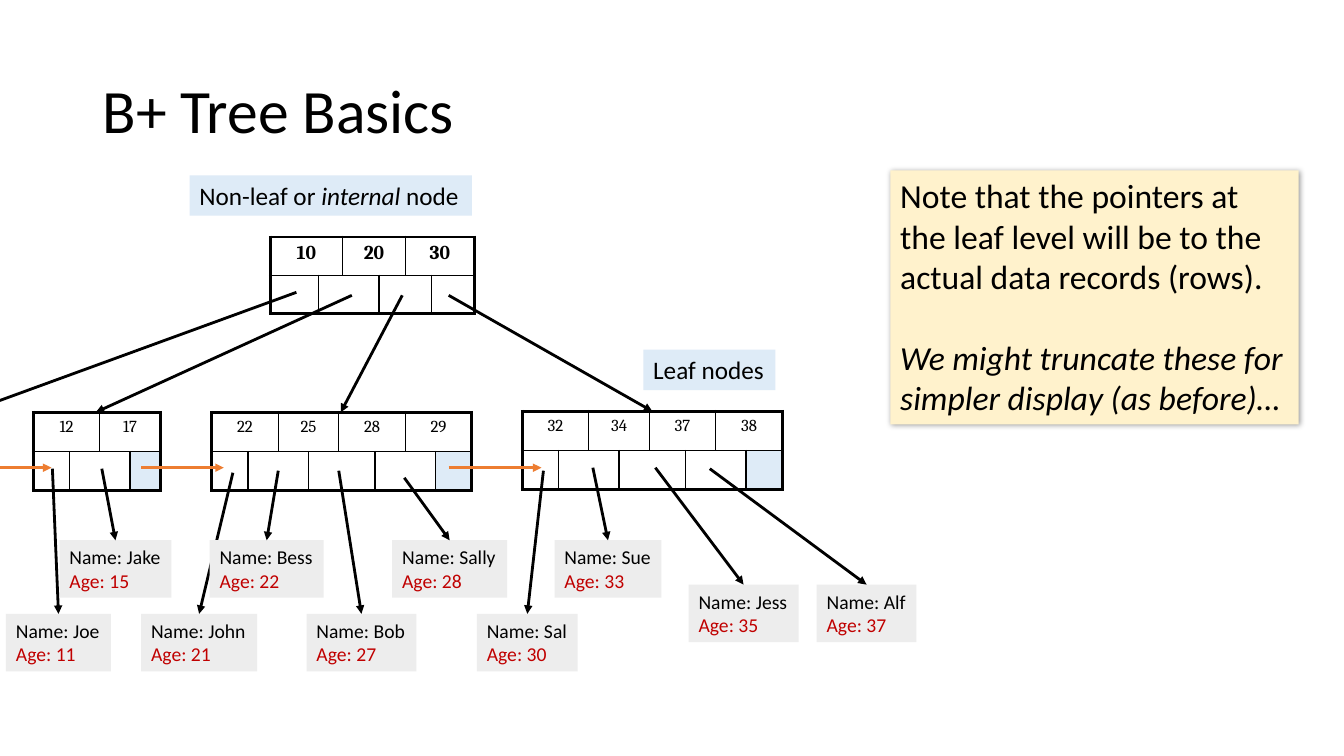
import dataclasses

import lxml.etree
import pptx
import pptx.dml.color
import pptx.enum.shapes
import pptx.enum.text
import pptx.oxml.ns
import pptx.util

Inches, Pt = pptx.util.Inches, pptx.util.Pt
RGB = pptx.dml.color.RGBColor.from_string
qn = pptx.oxml.ns.qn
SubElement = lxml.etree.SubElement


@dataclasses.dataclass(frozen=True)
class Theme:
    black: str = "000000"
    age: str = "C00000"
    link: str = "ED7D31"
    label: str = "DEEBF7"
    note: str = "FFF2CC"
    record: str = "EDEDED"
    body_font: str = "Calibri"
    key_font: str = "Cambria"
    title_size: int = 44
    note_size: int = 24
    label_size: int = 18
    record_size: int = 14
    root_size: int = 14
    leaf_size: int = 12
    inner_border: float = 1
    outer_border: float = 2.25
    arrow_width: float = 2


theme = Theme()
presentation = pptx.Presentation()
presentation.slide_width = Inches(13.33)
presentation.slide_height = Inches(7.5)
slide = presentation.slides.add_slide(presentation.slide_layouts[6])


def add_box(bounds, paragraphs, size, fill=None, wrap=False):
    """Add text; each paragraph is a list of (text, italic, colour) runs."""
    shape = slide.shapes.add_textbox(*map(Inches, bounds))
    if fill:
        shape.fill.solid()
        shape.fill.fore_color.rgb = RGB(fill)
    frame = shape.text_frame
    frame.word_wrap = wrap
    if fill:
        frame.auto_size = pptx.enum.text.MSO_AUTO_SIZE.SHAPE_TO_FIT_TEXT
    for index, runs in enumerate(paragraphs):
        paragraph = frame.add_paragraph() if index else frame.paragraphs[0]
        for text, italic, color in runs:
            run = paragraph.add_run()
            run.text = text
            run.font.color.rgb = RGB(color)
            formats = {"name": theme.body_font, "size": Pt(size), "italic": italic}
            for name, value in formats.items():
                setattr(run.font, name, value)
    return shape


def add_arrow(start, end, color=theme.black):
    connector = slide.shapes.add_connector(
        pptx.enum.shapes.MSO_CONNECTOR.STRAIGHT, *map(Inches, (*start, *end)))
    connector.line.color.rgb = RGB(color)
    connector.line.width = Pt(theme.arrow_width)
    SubElement(connector.line._get_or_add_ln(), qn("a:tailEnd"), type="triangle")
    SubElement(connector._element.spPr, qn("a:effectLst"))
    return connector


# Title and labels
black = theme.black
title = add_box((0.92, 0.4, 11.5, 1.45), [[("B+ Tree Basics", False, black)]],
                theme.title_size, wrap=True)
title.text_frame.vertical_anchor = pptx.enum.text.MSO_ANCHOR.MIDDLE
title.text_frame.paragraphs[0].line_spacing = 0.9
add_box((1.88, 1.74, 2.8, 0.4),
        [[("Non-leaf or ", False, black), ("internal ", True, black), ("node", False, black)]],
        theme.label_size, theme.label)
add_box((6.38, 3.47, 1.31, 0.4), [[("Leaf nodes", False, black)]],
        theme.label_size, theme.label)

# Note with a soft shadow
note = add_box(
    (8.83, 1.69, 4.05, 2.52),
    [[("Note that the pointers at the leaf level will be to the actual data records (rows).",
       False, black)],
     [("We might truncate these for simpler display (as before)…", True, black)]],
    theme.note_size, theme.note, wrap=True)
note.text_frame.paragraphs[1].space_before = Pt(29)
effects = SubElement(note._element.spPr, qn("a:effectLst"))
shadow = SubElement(effects, qn("a:outerShdw"), blurRad=str(Pt(4)), dist=str(Pt(1)),
                    dir="2700000", algn="tl", rotWithShape="0")
shadow_color = SubElement(shadow, qn("a:srgbClr"), val=black)
SubElement(shadow_color, qn("a:alpha"), val="40000")

# Tree nodes: keys span column pairs, pointers sit half a pair to the side
wide_leaf = [0.36, 0.3, 0.3, 0.3, 0.36, 0.3, 0.3, 0.36]
nodes = [
    ((2.68, 2.35), [10, 20, 30], [0.48, 0.21, 0.36, 0.26, 0.26, 0.43], 0.38, False),
    ((0.33, 4.09), [12, 17], wide_leaf[:4], 0.39, True),
    ((2.1, 4.09), [22, 25, 28, 29], wide_leaf, 0.39, True),
    ((5.18, 4.08), [32, 34, 37, 38], wide_leaf, 0.39, True),
]
for (left, top), keys, widths, row_height, is_leaf in nodes:
    last = len(widths) - 1
    size = theme.leaf_size if is_leaf else theme.root_size
    table = slide.shapes.add_table(2, len(widths), Inches(left), Inches(top),
                                   Inches(sum(widths)), Inches(2 * row_height)).table
    table.first_row = table.horz_banding = False
    for column, width in zip(table.columns, widths):
        column.width = Inches(width)
    for row in table.rows:
        row.height = Inches(row_height)
    key_spans = [(0, first, first + 1) for first in range(0, last, 2)]
    pointer_spans = [(1, max(first, 0), min(first + 1, last)) for first in range(-1, last + 1, 2)]
    texts = [str(key) for key in keys] + [""] * len(pointer_spans)
    for (row, first, end), text in zip(key_spans + pointer_spans, texts):
        outer = {"L": first == 0, "R": end == last, "T": row == 0, "B": row == 1}
        for index in range(first, end + 1):
            cell = table.cell(row, index)
            properties = cell._tc.get_or_add_tcPr()
            for side, is_outer in outer.items():
                width = theme.outer_border if is_outer else theme.inner_border
                border = SubElement(properties, qn(f"a:ln{side}"), w=str(Pt(width)))
                SubElement(SubElement(border, qn("a:solidFill")), qn("a:srgbClr"), val=black)
            cell.fill.background()
        cell = table.cell(row, first)
        if end > first:
            cell.merge(table.cell(row, end))
        if is_leaf and row == 1 and first == last:
            cell.fill.solid()
            cell.fill.fore_color.rgb = RGB(theme.label)
        paragraph = cell.text_frame.paragraphs[0]
        paragraph.text = text
        paragraph.alignment = pptx.enum.text.PP_ALIGN.CENTER
        paragraph.space_before = Pt(size * 0.2)
        paragraph.font.size = Pt(size)
        for run in paragraph.runs:
            run.font.color.rgb = RGB(black)
            formats = {"name": theme.key_font, "size": Pt(size), "bold": not is_leaf}
            for name, value in formats.items():
                setattr(run.font, name, value)

# Root pointers to the leaves
for start, end in [((2.94, 2.9), (-0.13, 4.02)), ((3.49, 2.93), (0.95, 4.09)),
                   ((3.99, 2.93), (3.38, 4.09)), ((4.45, 2.93), (6.47, 4.08))]:
    add_arrow(start, end)

# Links between neighbouring leaves
for start, end in [(0, 0.51), (1.4, 2.22), (4.45, 5.37)]:
    add_arrow((start, 4.64), (end, 4.64), theme.link)

# Data records, each with the leaf pointer that reaches it
upper, middle, lower = 5.36, 5.8, 6.09
records = [
    ("John", 21, 1.4, lower, 1.15, (2.31, 4.69)),
    ("Jake", 15, 0.59, upper, 1.11, (1.01, 4.65)),
    ("Joe", 11, 0.06, lower, 1.04, (0.52, 4.65)),
    ("Bess", 22, 2.08, upper, 1.13, (2.76, 4.67)),
    ("Bob", 27, 3.04, lower, 1.09, (3.36, 4.67)),
    ("Sally", 28, 3.89, upper, 1.14, (4.01, 4.74)),
    ("Sal", 30, 4.73, lower, 1, (5.39, 4.67)),
    ("Sue", 33, 5.5, upper, 1.06, (5.88, 4.64)),
    ("Jess", 35, 6.83, middle, 1.09, (6.5, 4.64)),
    ("Alf", 37, 8.1, middle, 0.99, (7.04, 4.65)),
]
for name, age, left, top, width, pointer in records:
    record = add_box((left, top, width, 0.57),
                     [[(f"Name: {name}", False, black)], [(f"Age: {age}", False, theme.age)]],
                     theme.record_size, theme.record)
    add_arrow(pointer, (left + width / 2, top)).end_connect(record, 0)

presentation.save("out.pptx")
